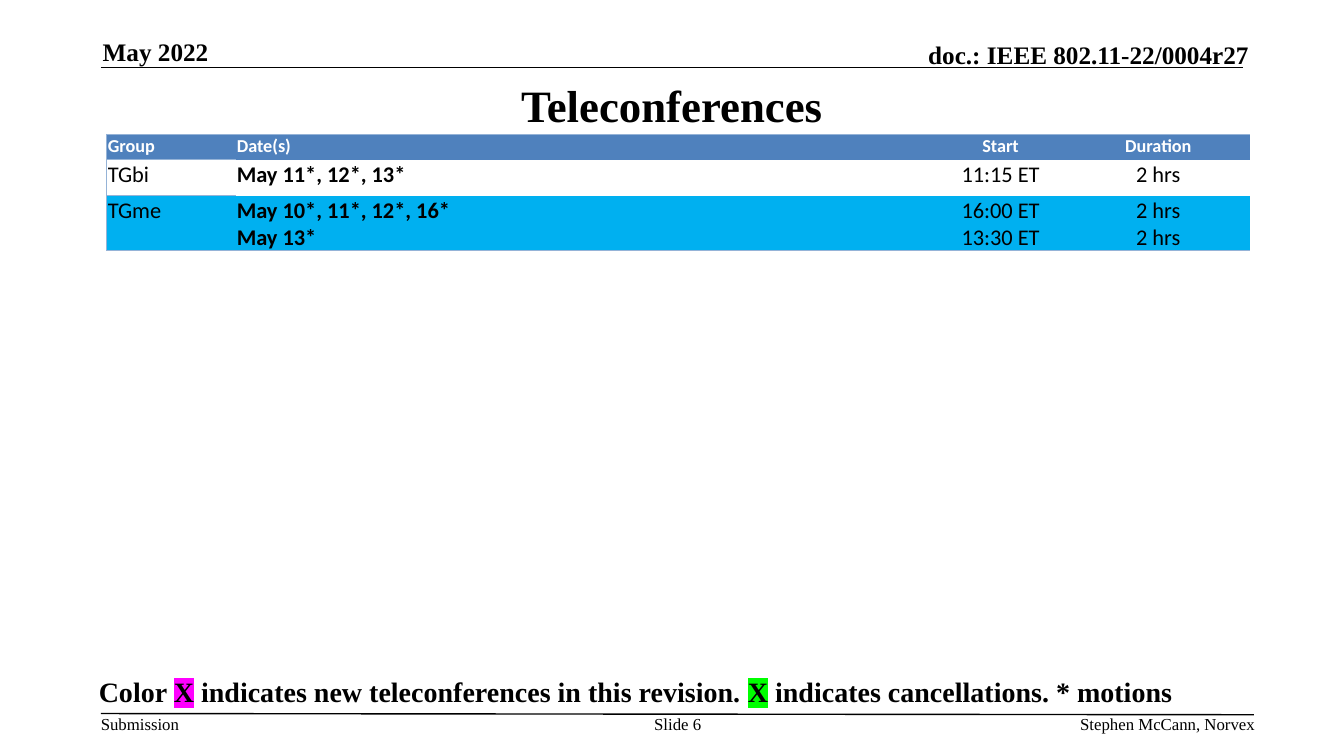
from dataclasses import dataclass

from lxml import etree
from pptx import Presentation
from pptx.dml.color import RGBColor
from pptx.enum.shapes import MSO_CONNECTOR
from pptx.enum.text import MSO_ANCHOR, MSO_AUTO_SIZE, PP_ALIGN
from pptx.oxml.ns import qn
from pptx.util import Cm, Pt

LEFT, CENTER, RIGHT = PP_ALIGN.LEFT, PP_ALIGN.CENTER, PP_ALIGN.RIGHT
TOP, MIDDLE, BOTTOM = MSO_ANCHOR.TOP, MSO_ANCHOR.MIDDLE, MSO_ANCHOR.BOTTOM
STRAIGHT = MSO_CONNECTOR.STRAIGHT
NO_AUTOFIT = MSO_AUTO_SIZE.NONE

BLACK = RGBColor(0x00, 0x00, 0x00)
WHITE = RGBColor(0xFF, 0xFF, 0xFF)
HEADER_BLUE = RGBColor(0x4F, 0x81, 0xBD)
ROW_BLUE = RGBColor(0x00, 0xB0, 0xF0)
BORDER_BLUE = RGBColor(0x95, 0xB3, 0xD7)
NEW_MAGENTA = RGBColor(0xFF, 0x00, 0xFF)
CANCELLED_GREEN = RGBColor(0x00, 0xFF, 0x00)

SERIF = "Times New Roman"
SANS = "Calibri"
PLAIN_TABLE_STYLE = "{2D5ABB26-0587-4C30-8999-92F81FD0307C}"
TITLE_ONLY_LAYOUT = 5


@dataclass(frozen=True)
class Box:
    left: float
    top: float
    width: float
    height: float


@dataclass(frozen=True)
class Label:
    text: str
    box: Box
    size: int = 12
    bold: bool = False
    align: PP_ALIGN = LEFT
    anchor: MSO_ANCHOR = TOP
    wrap: bool = True


@dataclass(frozen=True)
class Rule:
    start: tuple[float, float]
    end: tuple[float, float]


@dataclass(frozen=True)
class Column:
    width: float
    align: PP_ALIGN
    bold: bool = False


@dataclass(frozen=True)
class Row:
    height: float
    cells: tuple[str, ...]
    fill: RGBColor | None = None
    header: bool = False


RULES = (
    Rule((2.54, 1.7), (31.32, 1.7)),
    Rule((2.54, 17.98), (31.6, 18.01)),
)
LABELS = (
    Label("Submission", Box(2.54, 17.98, 2.01, 0.51), wrap=False),
    Label("doc.: IEEE 802.11-22/0004r27", Box(18.52, 0.99, 12.95, 0.76), 18, True, RIGHT, BOTTOM),
    Label("Slide 6", Box(16.1, 17.98, 1.96, 1.02), align=CENTER),
    Label("Stephen McCann, Norvex", Box(19.84, 17.98, 11.79, 0.51), align=RIGHT),
    Label("May 2022", Box(2.59, 0.91, 6.93, 0.76), 18, True, LEFT, BOTTOM),
)
TITLE_BOX = Box(2.54, 1.91, 28.78, 1.47)
LEGEND_BOX = Box(2.24, 16.87, 29.95, 1.12)
LEGEND = (
    ("Color ", None),
    ("X", NEW_MAGENTA),
    (" indicates new teleconferences in this revision. ", None),
    ("X", CANCELLED_GREEN),
    (" indicates cancellations. * motions", None),
)
TABLE_LEFT, TABLE_TOP = 2.69, 3.38
COLUMNS = (
    Column(3.25, LEFT),
    Column(17.6, LEFT, bold=True),
    Column(3.35, CENTER),
    Column(4.6, CENTER),
)
ROWS = (
    Row(0.64, ("Group", "Date(s)", "Start", "Duration"), HEADER_BLUE, header=True),
    Row(0.91, ("TGbi", "May 11*, 12*, 13*", "11:15 ET", "2 hrs")),
    Row(1.37, ("TGme", "May 10*, 11*, 12*, 16*\nMay 13*", "16:00 ET\n13:30 ET", "2 hrs\n2 hrs"), ROW_BLUE),
)


def add_text(paragraph, text: str, *, size: int, font: str = SERIF, color: RGBColor = BLACK,
             bold: bool = False, align: PP_ALIGN = LEFT, highlight: RGBColor | None = None) -> None:
    paragraph.alignment = align
    run = paragraph.add_run()
    run.text = text
    run.font.size = Pt(size)
    run.font.bold = bold
    run.font.color.rgb = color
    if highlight is not None:
        mark = etree.Element(qn("a:highlight"))
        etree.SubElement(mark, qn("a:srgbClr"), val=str(highlight))
        run.font.fill  
        run.font.color
        run._r.get_or_add_rPr().find(qn("a:solidFill")).addnext(mark)
    run.font.name = font


def place(shape, box: Box) -> None:
    shape.left, shape.top = Cm(box.left), Cm(box.top)
    shape.width, shape.height = Cm(box.width), Cm(box.height)


def add_frame(slide, box: Box, wrap: bool = True):
    shape = slide.shapes.add_textbox(Cm(box.left), Cm(box.top), Cm(box.width), Cm(box.height))
    shape.text_frame.word_wrap = wrap
    return shape.text_frame


def add_label(slide, label: Label) -> None:
    frame = add_frame(slide, label.box, label.wrap)
    frame.margin_left = frame.margin_right = frame.margin_top = frame.margin_bottom = 0
    frame.vertical_anchor = label.anchor
    add_text(frame.paragraphs[0], label.text, size=label.size, bold=label.bold, align=label.align)


def add_rule(slide, rule: Rule) -> None:
    connector = slide.shapes.add_connector(STRAIGHT, *map(Cm, rule.start + rule.end))
    connector.line.color.rgb = BLACK
    connector.line.width = Pt(1)
    etree.SubElement(connector.element.spPr, qn("a:effectLst"))


def add_title(slide, text: str) -> None:
    title = slide.shapes.title
    place(title, TITLE_BOX)
    title.text_frame.auto_size = NO_AUTOFIT
    title.text_frame.vertical_anchor = MIDDLE
    add_text(title.text_frame.paragraphs[0], text, size=32, bold=True, align=CENTER)


def add_legend(slide) -> None:
    paragraph = add_frame(slide, LEGEND_BOX).paragraphs[0]
    for text, highlight in LEGEND:
        add_text(paragraph, text, size=20, bold=True, highlight=highlight)


def set_borders(cell, sides: str) -> None:
    properties = cell._tc.get_or_add_tcPr()
    for side in sides:
        line = etree.SubElement(properties, qn(f"a:ln{side}"), w=str(Pt(0.5)))
        fill = etree.SubElement(line, qn("a:solidFill"))
        etree.SubElement(fill, qn("a:srgbClr"), val=str(BORDER_BLUE))


def fill_cell(cell, text: str, row: Row, column: Column) -> None:
    cell.margin_left = cell.margin_right = cell.margin_top = Cm(0.03)
    cell.margin_bottom = 0
    if row.fill is None:
        cell.fill.background()
    else:
        cell.fill.solid()
        cell.fill.fore_color.rgb = row.fill
    frame = cell.text_frame
    for index, line in enumerate(text.split("\n")):
        paragraph = frame.add_paragraph() if index else frame.paragraphs[0]
        add_text(paragraph, line, size=13 if row.header else 16, font=SANS,
                 color=WHITE if row.header else BLACK,
                 bold=row.header or column.bold, align=column.align)


def add_schedule(slide) -> None:
    width = sum(column.width for column in COLUMNS)
    height = sum(row.height for row in ROWS)
    graphic = slide.shapes.add_table(len(ROWS), len(COLUMNS), Cm(TABLE_LEFT), Cm(TABLE_TOP),
                                     Cm(width), Cm(height))
    next(graphic.element.iter(qn("a:tableStyleId"))).text = PLAIN_TABLE_STYLE
    table = graphic.table
    for index, column in enumerate(COLUMNS):
        table.columns[index].width = Cm(column.width)
    for row_index, row in enumerate(ROWS):
        table.rows[row_index].height = Cm(row.height)
        for column_index, column in enumerate(COLUMNS):
            cell = table.cell(row_index, column_index)
            outer = ("T" if row_index == 0 else "") + ("B" if row_index == len(ROWS) - 1 else "")
            set_borders(cell, outer if column_index else "LTB")
            fill_cell(cell, row.cells[column_index], row, column)


def main() -> None:
    presentation = Presentation()
    presentation.slide_width, presentation.slide_height = Cm(33.87), Cm(19.05)
    slide = presentation.slides.add_slide(presentation.slide_layouts[TITLE_ONLY_LAYOUT])
    for rule in RULES:
        add_rule(slide, rule)
    for label in LABELS:
        add_label(slide, label)
    add_title(slide, "Teleconferences")
    add_legend(slide)
    add_schedule(slide)
    presentation.save("out.pptx")


if __name__ == "__main__":
    main()
